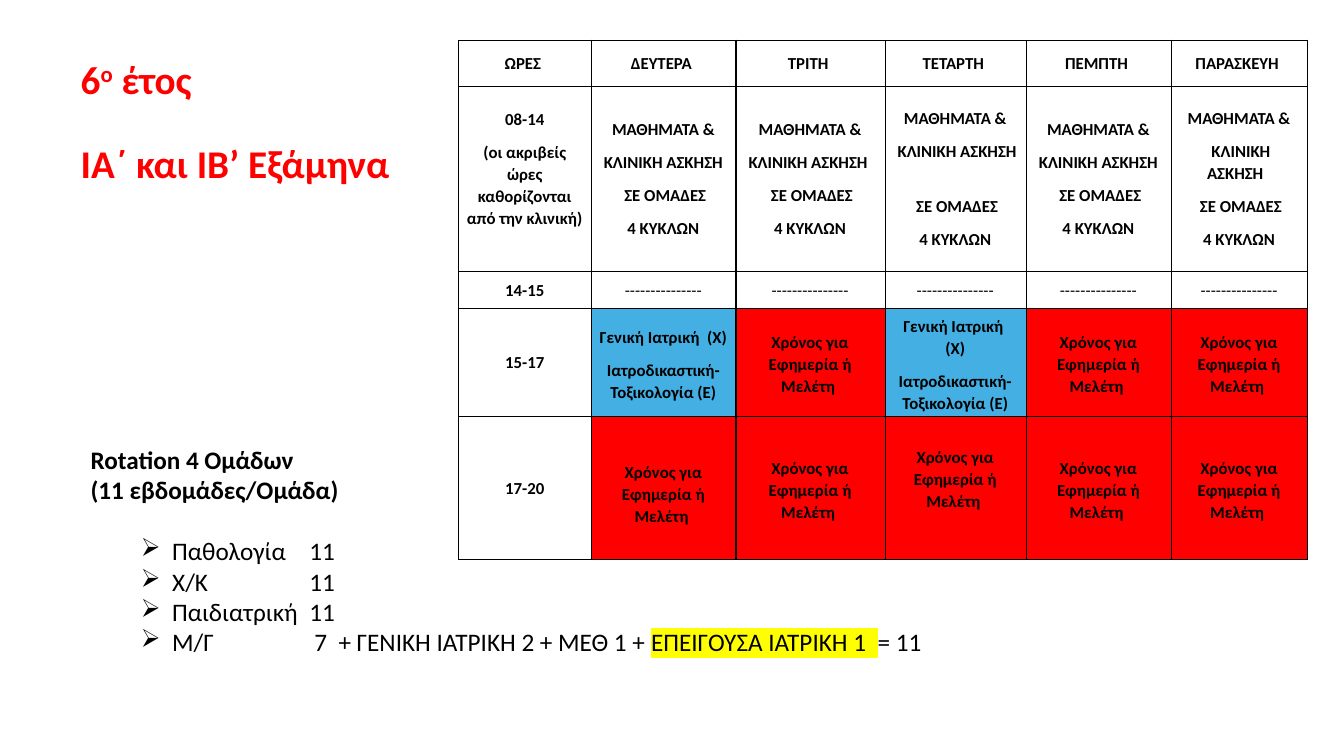
from dataclasses import dataclass

from lxml import etree
from pptx import Presentation
from pptx.dml.color import RGBColor
from pptx.enum.text import MSO_ANCHOR, MSO_AUTO_SIZE, PP_ALIGN
from pptx.oxml.ns import qn
from pptx.util import Inches, Pt

BLACK = RGBColor(0, 0, 0)
RED = RGBColor(255, 0, 0)
BLUE = RGBColor(0x43, 0xAF, 0xE2)
YELLOW = RGBColor(255, 255, 0)
LEFT, CENTER = PP_ALIGN.LEFT, PP_ALIGN.CENTER
TOP, MIDDLE = MSO_ANCHOR.TOP, MSO_ANCHOR.MIDDLE
NO_FIT = MSO_AUTO_SIZE.NONE
FONT = "Calibri"


@dataclass
class Slot:
    text: str
    fill: RGBColor | None = None
    bold: bool = True
    top: float = 0
    foot: float = 0


@dataclass
class Item:
    text: str
    tab: float = 2.17
    gap: float = 0


DAYS = ["ΔΕΥΤΕΡΑ ", "ΤΡΙΤΗ ", "ΤΕΤΑΡΤΗ ", "ΠΕΜΠΤΗ ", "ΠΑΡΑΣΚΕΥΗ "]
HOURS = Slot("08-14\n(οι ακριβείς ώρες καθορίζονται από την κλινική)", foot=0.2)
CLASS = Slot("ΜΑΘΗΜΑΤΑ &\n ΚΛΙΝΙΚΗ ΑΣΚΗΣΗ  \n ΣΕ ΟΜΑΔΕΣ\n4 ΚΥΚΛΩΝ")
BREAK = Slot("-" * 15, bold=False)
COURSE = Slot("Γενική Ιατρική  (Χ)\nΙατροδικαστική-Τοξικολογία (Ε)", BLUE, top=0.04)
DUTY = "Χρόνος για Εφημερία ή Μελέτη "
STUDY = Slot(DUTY, RED, top=0.04)
LOW = Slot(DUTY, RED, top=0.12)
HIGH = Slot(DUTY, RED, top=0.04, foot=0.22)
ROWS = [
    [Slot("ΩΡΕΣ ")] + [Slot(day) for day in DAYS],
    [HOURS] + [CLASS] * 5,
    [Slot("14-15")] + [BREAK] * 5,
    [Slot("15-17"), COURSE, STUDY, COURSE, STUDY, STUDY],
    [Slot("17-20"), LOW, STUDY, HIGH, STUDY, STUDY],
]
WIDTHS = [1.32, 1.43, 1.48, 1.4, 1.44, 1.35]
HEIGHTS = [0.46, 1.83, 0.37, 1.07, 1.42]
ITEMS = [
    Item("Παθολογία\t11", gap=22),
    Item("Χ/Κ\t11"),
    Item("Παιδιατρική\t11"),
    Item("Μ/Γ\t7  + ΓΕΝΙΚΗ ΙΑΤΡΙΚΗ 2 + ΜΕΘ 1 + ", tab=2.22),
]


def style(run, size: float, bold: bool, color: RGBColor = BLACK) -> None:
    font = run.font
    font.name, font.size, font.bold = FONT, Pt(size), bold
    font.color.rgb = color


def add_run(para, text: str, size: float, bold: bool, color: RGBColor = BLACK):
    run = para.add_run()
    run.text = text
    style(run, size, bold, color)
    return run


def add_tag(parent, name: str, **attrs: str):
    return etree.SubElement(parent, qn(name), attrs)


def mark(run, color: RGBColor) -> None:
    """Highlight a run."""
    props = run.font._element
    light = add_tag(props, "a:highlight")
    add_tag(light, "a:srgbClr", val=str(color))
    props.find(qn("a:solidFill")).addnext(light)


def bullet(para, tab: float) -> None:
    """Add an arrowhead bullet, which is the Ø of Wingdings, and a tab stop."""
    props = para._p.get_or_add_pPr()
    props.set("marL", str(Inches(0.81)))
    props.set("indent", str(Inches(-0.31)))
    add_tag(props, "a:buFont", typeface="Wingdings", pitchFamily="2", charset="2")
    add_tag(props, "a:buChar", char="Ø")
    tabs = add_tag(props, "a:tabLst")
    add_tag(tabs, "a:tab", pos=str(Inches(tab)), algn="l")


def border(cell) -> None:
    props = cell._tc.get_or_add_tcPr()
    for i, side in enumerate(("a:lnL", "a:lnR", "a:lnT", "a:lnB")):
        line = etree.Element(qn(side), w=str(Pt(1)))
        fill = add_tag(line, "a:solidFill")
        add_tag(fill, "a:srgbClr", val=str(BLACK))
        props.insert(i, line)


def fill_cell(cell, slot: Slot) -> None:
    cell.margin_left, cell.margin_right = Inches(0.07), Inches(0.08)
    cell.margin_top, cell.margin_bottom = Inches(slot.top), Inches(slot.foot)
    cell.vertical_anchor = MIDDLE
    if slot.fill is None:
        cell.fill.background()
    else:
        cell.fill.solid()
        cell.fill.fore_color.rgb = slot.fill
    border(cell)
    cell.text_frame.text = slot.text
    for i, para in enumerate(cell.text_frame.paragraphs):
        para.alignment, para.line_spacing = CENTER, 1.07
        para.space_before = Pt(8 if i else 0)
        for run in para.runs:
            style(run, 12, slot.bold)


def add_title(slide) -> None:
    title = slide.shapes.title
    title.left, title.top = Inches(0.7), Inches(0.55)
    title.width, title.height = Inches(3.94), Inches(1.37)
    frame = title.text_frame
    frame.word_wrap, frame.auto_size = True, NO_FIT
    frame.vertical_anchor = TOP
    year, term = frame.paragraphs[0], frame.add_paragraph()
    for para, gap in ((year, 0), (term, 30)):
        para.alignment, para.line_spacing = LEFT, 0.9
        para.space_before = Pt(gap)
    add_run(year, "6", 28, True, RED)
    power = add_run(year, "ο", 28, True, RED)
    power.font._element.set("baseline", "30000")
    add_run(year, " έτος", 28, True, RED)
    add_run(term, "ΙΑ΄ και ΙΒ’ Εξάμηνα", 28, True, RED)


def add_plan(slide) -> None:
    shape = slide.shapes.add_table(
        len(ROWS), len(WIDTHS), Inches(4.55), Inches(0.4),
        Inches(sum(WIDTHS)), Inches(sum(HEIGHTS)))
    table = shape.table
    table.first_row = table.horz_banding = False
    for col, width in zip(table.columns, WIDTHS):
        col.width = Inches(width)
    for row, height, slots in zip(table.rows, HEIGHTS, ROWS):
        row.height = Inches(height)
        for cell, slot in zip(row.cells, slots):
            fill_cell(cell, slot)


def add_groups(slide) -> None:
    box = slide.shapes.add_textbox(
        Inches(0.8), Inches(4.36), Inches(9.23), Inches(2.22))
    frame = box.text_frame
    frame.word_wrap = True
    frame.text = "Rotation 4 Ομάδων\n(11 εβδομάδες/Ομάδα)"
    for para in frame.paragraphs:
        style(para.runs[0], 18, True)
    for item in ITEMS:
        para = frame.add_paragraph()
        para.level, para.space_before = 1, Pt(item.gap)
        bullet(para, item.tab)
        add_run(para, item.text, 18, False)
    mark(add_run(para, "ΕΠΕΙΓΟΥΣΑ ΙΑΤΡΙΚΗ 1  ", 18, False), YELLOW)
    add_run(para, "= 11", 18, False)


def main() -> None:
    deck = Presentation()
    deck.slide_width, deck.slide_height = Inches(13.33), Inches(7.5)
    slide = deck.slides.add_slide(deck.slide_layouts[5])
    add_groups(slide)
    add_title(slide)
    add_plan(slide)
    deck.save("out.pptx")


if __name__ == "__main__":
    main()
